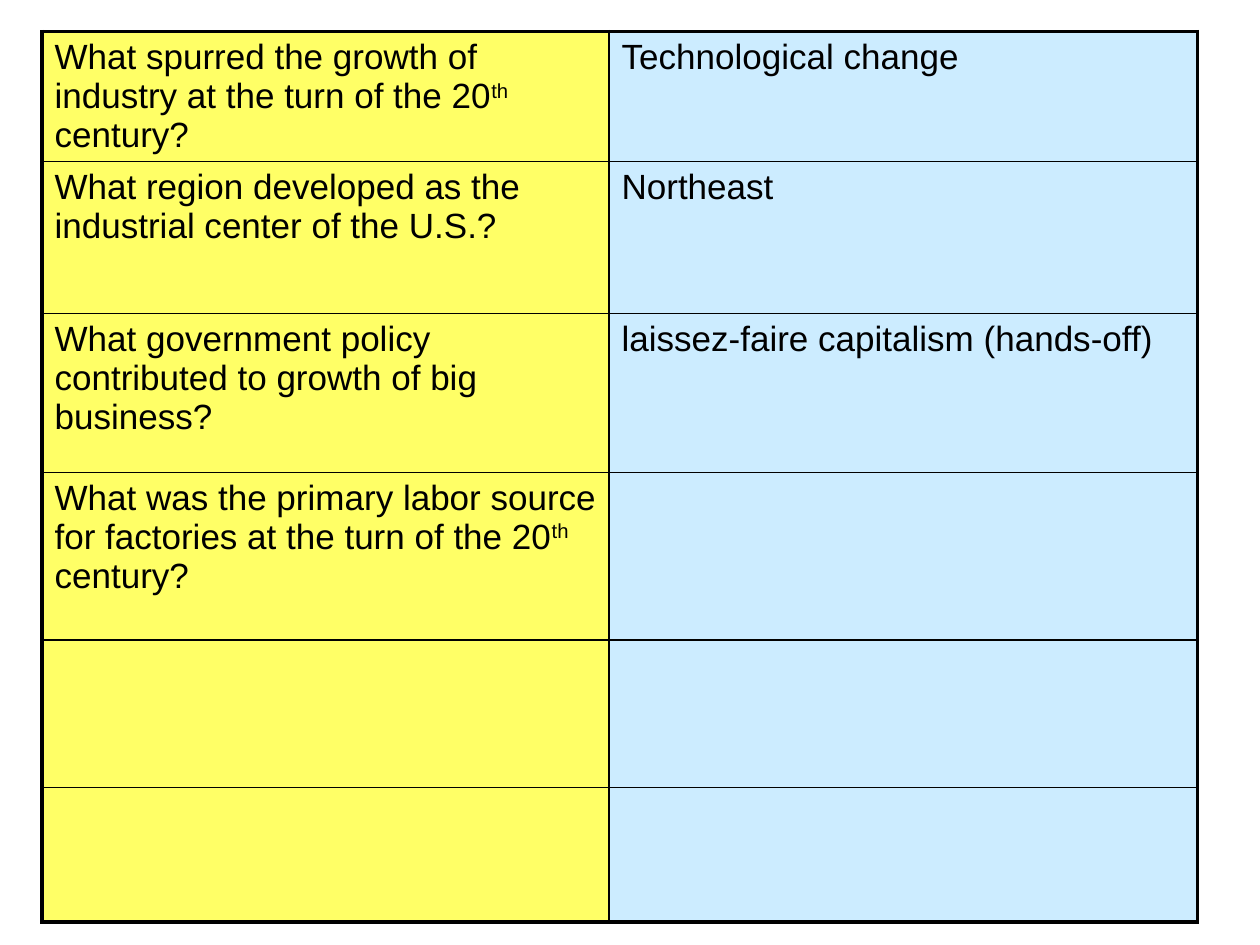
"""Builds a two-column question and answer table about the growth of industry."""
from lxml import etree
from pptx import Presentation
from pptx.dml.color import RGBColor
from pptx.oxml.ns import qn
from pptx.util import Pt

FONT = "Arial"
BLACK = "000000"
COLUMN_FILLS = ("FFFF66", "CCECFF")
COLUMN_WIDTHS = (324, 336.24)
ROW_HEIGHTS = (68.4, 87.12, 90.72, 95.76, 84.24, 77.04)
OUTER_LINE, INNER_LINE = 2.25, 1
SUPERSCRIPT = "30000"

ROWS = (
    (("What spurred the growth of industry at the turn of the 20", "th", " century?"),
     ("Technological change",)),
    (("What region developed as the industrial center of the U.S.?",),
     ("Northeast",)),
    (("What government policy contributed to growth of big business?",),
     ("laissez-faire capitalism (hands-off)",)),
    (("What was the primary labor source for factories at the turn of the 20", "th", " century?"),
     ()),
    ((), ()),
    ((), ()),
)


def color(hex_string):
    """Return the colour for a hex string."""
    return RGBColor.from_string(hex_string)


def add_border(cell, side, width):
    """Draw one side of a cell as a solid black line."""
    line = etree.SubElement(cell._tc.get_or_add_tcPr(), qn(f"a:ln{side}"), w=str(Pt(width)))
    fill = etree.SubElement(line, qn("a:solidFill"))
    etree.SubElement(fill, qn("a:srgbClr"), val=BLACK)


def add_spans(para, texts):
    """Add the runs of a paragraph, raising the ordinal ending."""
    for text in texts:
        span = para.add_run()
        span.text = text
        span.font.name = FONT
        span.font.size = Pt(20)
        span.font.color.rgb = color(BLACK)
        if text == "th":
            span.font._element.set("baseline", SUPERSCRIPT)


def style_cell(cell, row, column):
    """Give a cell its borders, heavier at the table edge, and its column fill."""
    edges = {
        "L": column == 0,
        "R": column == len(COLUMN_WIDTHS) - 1,
        "T": row == 0,
        "B": row == len(ROWS) - 1,
    }
    for side, is_outer in edges.items():
        add_border(cell, side, OUTER_LINE if is_outer else INNER_LINE)
    cell.fill.solid()
    cell.fill.fore_color.rgb = color(COLUMN_FILLS[column])


def add_question_table(page):
    """Add the table of questions and answers."""
    frame = page.shapes.add_table(
        len(ROWS), len(COLUMN_WIDTHS), Pt(24), Pt(18),
        Pt(sum(COLUMN_WIDTHS)), Pt(sum(ROW_HEIGHTS)))
    table = frame.table
    table.first_row = False
    table.horz_banding = False
    for column, width in zip(table.columns, COLUMN_WIDTHS):
        column.width = Pt(width)
    for row, height in zip(table.rows, ROW_HEIGHTS):
        row.height = Pt(height)
    for row, entries in enumerate(ROWS):
        for column, texts in enumerate(entries):
            cell = table.cell(row, column)
            style_cell(cell, row, column)
            add_spans(cell.text_frame.paragraphs[0], texts)


def main():
    """Build and save the deck."""
    deck = Presentation()
    deck.slide_width, deck.slide_height = Pt(720), Pt(540)
    page = deck.slides.add_slide(deck.slide_layouts[6])
    add_question_table(page)
    deck.save("out.pptx")


if __name__ == "__main__":
    main()
